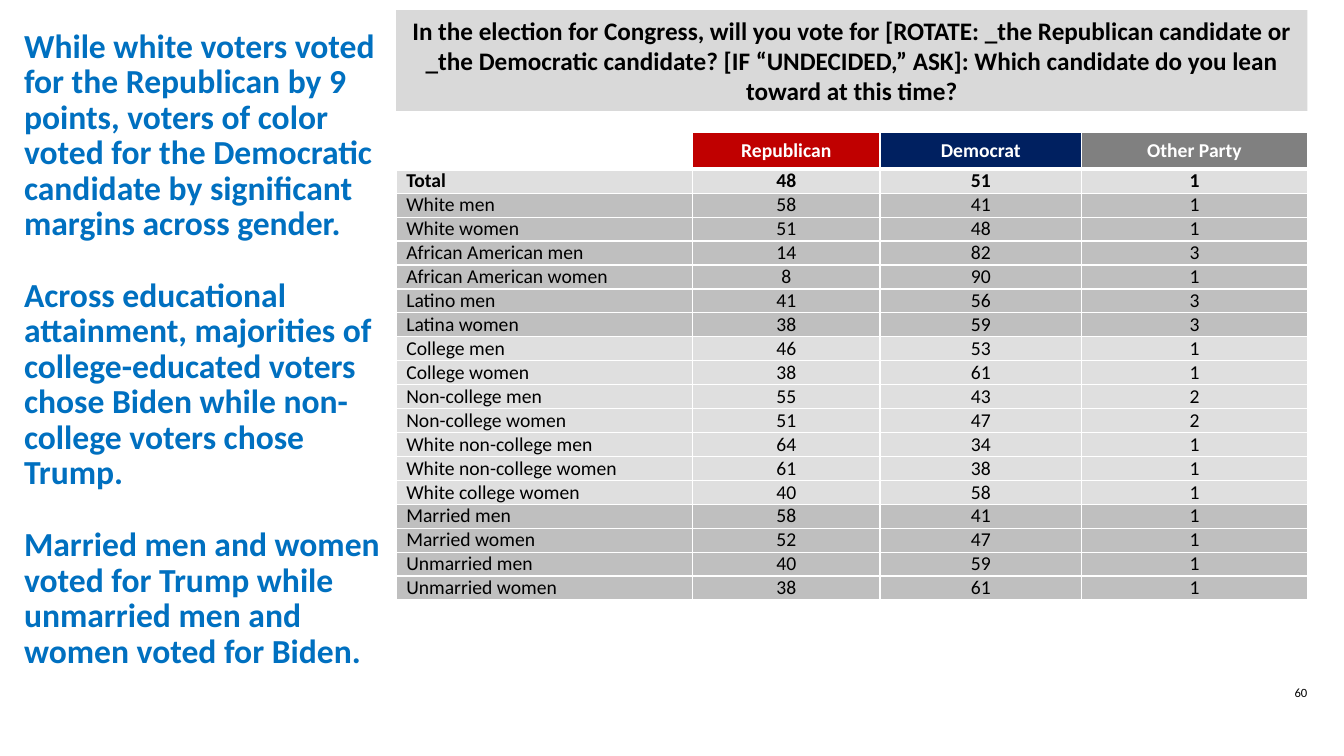
from typing import NamedTuple

from lxml import etree
from pptx import Presentation
from pptx.dml.color import RGBColor
from pptx.enum.shapes import MSO_SHAPE
from pptx.enum.text import MSO_ANCHOR, PP_ALIGN
from pptx.oxml.ns import qn
from pptx.util import Pt

LEFT, CENTER = PP_ALIGN.LEFT, PP_ALIGN.CENTER
TOP, MIDDLE = MSO_ANCHOR.TOP, MSO_ANCHOR.MIDDLE
RECTANGLE = MSO_SHAPE.RECTANGLE

FONT = "Calibri"
BLACK = RGBColor(0x00, 0x00, 0x00)
WHITE = RGBColor(0xFF, 0xFF, 0xFF)
BLUE = RGBColor(0x00, 0x70, 0xC0)
RED = RGBColor(0xC0, 0x00, 0x00)
NAVY = RGBColor(0x00, 0x20, 0x60)
GRAY = RGBColor(0x80, 0x80, 0x80)
BANNER_GRAY = RGBColor(0xD9, 0xD9, 0xD9)
LIGHT = RGBColor(0xDF, 0xDF, 0xDF)
MEDIUM = RGBColor(0xBF, 0xBF, 0xBF)


class TextStyle(NamedTuple):
    size: float
    color: RGBColor
    bold: bool = False
    align: PP_ALIGN = LEFT


class Heading(NamedTuple):
    label: str
    fill: RGBColor
    width: float


class VoterGroup(NamedTuple):
    name: str
    republican: int
    democrat: int
    other: int
    fill: RGBColor
    bold: bool = False


FINDINGS = [
    "While white voters voted for the Republican by 9 points, voters of color voted "
    "for the Democratic candidate by significant margins across gender.",
    "Across educational attainment, majorities of college-educated voters chose Biden "
    "while non-college voters chose Trump.",
    "Married men and women voted for Trump while unmarried men and women voted for Biden.",
]
QUESTION = (
    "In the election for Congress, will you vote for [ROTATE: _the Republican candidate "
    "or _the Democratic candidate? [IF “UNDECIDED,” ASK]: Which candidate do you lean "
    "toward at this time?"
)
HEADINGS = [
    Heading("", WHITE, 211.7),
    Heading("Republican", RED, 133.9),
    Heading("Democrat", NAVY, 144),
    Heading("Other Party", GRAY, 161.3),
]
GROUPS = [
    VoterGroup("Total", 48, 51, 1, LIGHT, True),
    VoterGroup("White men", 58, 41, 1, MEDIUM),
    VoterGroup("White women", 51, 48, 1, MEDIUM),
    VoterGroup("African American men", 14, 82, 3, MEDIUM),
    VoterGroup("African American women", 8, 90, 1, MEDIUM),
    VoterGroup("Latino men", 41, 56, 3, MEDIUM),
    VoterGroup("Latina women", 38, 59, 3, MEDIUM),
    VoterGroup("College men", 46, 53, 1, LIGHT),
    VoterGroup("College women", 38, 61, 1, LIGHT),
    VoterGroup("Non-college men", 55, 43, 2, LIGHT),
    VoterGroup("Non-college women", 51, 47, 2, LIGHT),
    VoterGroup("White non-college men", 64, 34, 1, LIGHT),
    VoterGroup("White non-college women", 61, 38, 1, LIGHT),
    VoterGroup("White college women", 40, 58, 1, LIGHT),
    VoterGroup("Married men", 58, 41, 1, MEDIUM),
    VoterGroup("Married women", 52, 47, 1, MEDIUM),
    VoterGroup("Unmarried men", 40, 59, 1, MEDIUM),
    VoterGroup("Unmarried women", 38, 61, 1, MEDIUM),
]
PANEL_LEFT, PANEL_WIDTH = 283, 650.9
HEADER_HEIGHT, ROW_HEIGHT = 26.6, 17.1


def style_text(frame, style: TextStyle) -> None:
    for paragraph in frame.paragraphs:
        paragraph.alignment = style.align
        for run in paragraph.runs:
            run.font.name = FONT
            run.font.size = Pt(style.size)
            run.font.bold = style.bold
            run.font.color.rgb = style.color


def add_text(slide, left: float, top: float, width: float, height: float,
             text: str, style: TextStyle, anchor: MSO_ANCHOR):
    frame = slide.shapes.add_textbox(Pt(left), Pt(top), Pt(width), Pt(height)).text_frame
    frame.word_wrap = True
    frame.vertical_anchor = anchor
    frame.text = text
    style_text(frame, style)
    return frame


def add_borders(cell, bottom_width: float) -> None:
    properties = cell._tc.get_or_add_tcPr()
    for index, side in enumerate(("lnL", "lnR", "lnT", "lnB")):
        width = bottom_width if side == "lnB" else 1
        line = etree.Element(qn(f"a:{side}"), w=str(Pt(width)))
        fill = etree.SubElement(line, qn("a:solidFill"))
        etree.SubElement(fill, qn("a:srgbClr"), val=str(WHITE))
        properties.insert(index, line)


def fill_cell(cell, text: str, fill: RGBColor, style: TextStyle,
              bottom_width: float = 1) -> None:
    cell.margin_top = cell.margin_bottom = 0
    cell.vertical_anchor = MIDDLE
    cell.text = text
    style_text(cell.text_frame, style)
    cell.fill.solid()
    cell.fill.fore_color.rgb = fill
    add_borders(cell, bottom_width)


def add_findings(slide) -> None:
    frame = add_text(slide, 10.1, 10, 272.2, 480, "\n".join(FINDINGS),
                     TextStyle(24, BLUE, True), MIDDLE)
    for index, paragraph in enumerate(frame.paragraphs):
        paragraph.line_spacing = 0.88
        if index:
            paragraph.space_before = Pt(25.9)


def add_question(slide) -> None:
    banner = slide.shapes.add_shape(RECTANGLE, Pt(PANEL_LEFT), Pt(7.2),
                                    Pt(PANEL_WIDTH), Pt(72))
    banner.shadow.inherit = False
    banner.fill.solid()
    banner.fill.fore_color.rgb = BANNER_GRAY
    banner.line.fill.background()
    frame = banner.text_frame
    frame.word_wrap = True
    frame.vertical_anchor = MIDDLE
    frame.text = QUESTION
    style_text(frame, TextStyle(18, BLACK, True, CENTER))


def add_results(slide) -> None:
    height = HEADER_HEIGHT + ROW_HEIGHT * len(GROUPS)
    results = slide.shapes.add_table(len(GROUPS) + 1, len(HEADINGS), Pt(PANEL_LEFT),
                                     Pt(94.3), Pt(PANEL_WIDTH), Pt(height)).table
    results.rows[0].height = Pt(HEADER_HEIGHT)
    for column, heading in enumerate(HEADINGS):
        results.columns[column].width = Pt(heading.width)
        fill_cell(results.cell(0, column), heading.label, heading.fill,
                  TextStyle(14, WHITE, True, CENTER), bottom_width=3)

    for row, group in enumerate(GROUPS, start=1):
        results.rows[row].height = Pt(ROW_HEIGHT)
        values = (group.name, group.republican, group.democrat, group.other)
        for column, value in enumerate(values):
            style = TextStyle(14, BLACK, group.bold, CENTER if column else LEFT)
            fill_cell(results.cell(row, column), str(value), group.fill, style)


def main() -> None:
    presentation = Presentation()
    presentation.slide_width, presentation.slide_height = Pt(960), Pt(540)
    slide = presentation.slides.add_slide(presentation.slide_layouts[6])

    # Slide number
    add_text(slide, 902.2, 486, 54, 23.8, "60", TextStyle(9, BLACK, align=CENTER), TOP)
    # Findings on the left
    add_findings(slide)
    # Survey question and results on the right
    add_question(slide)
    add_results(slide)

    presentation.save("out.pptx")


if __name__ == "__main__":
    main()
